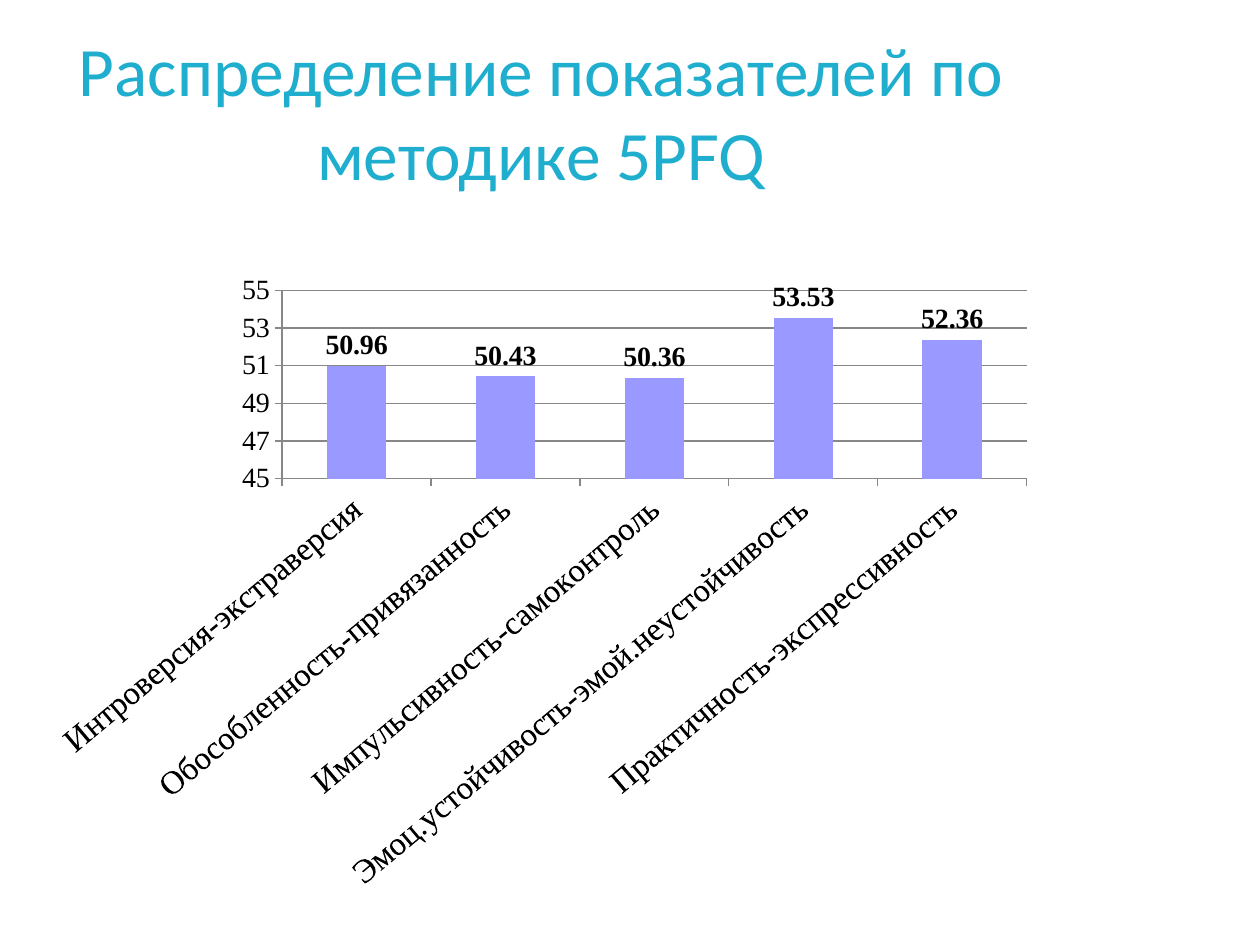
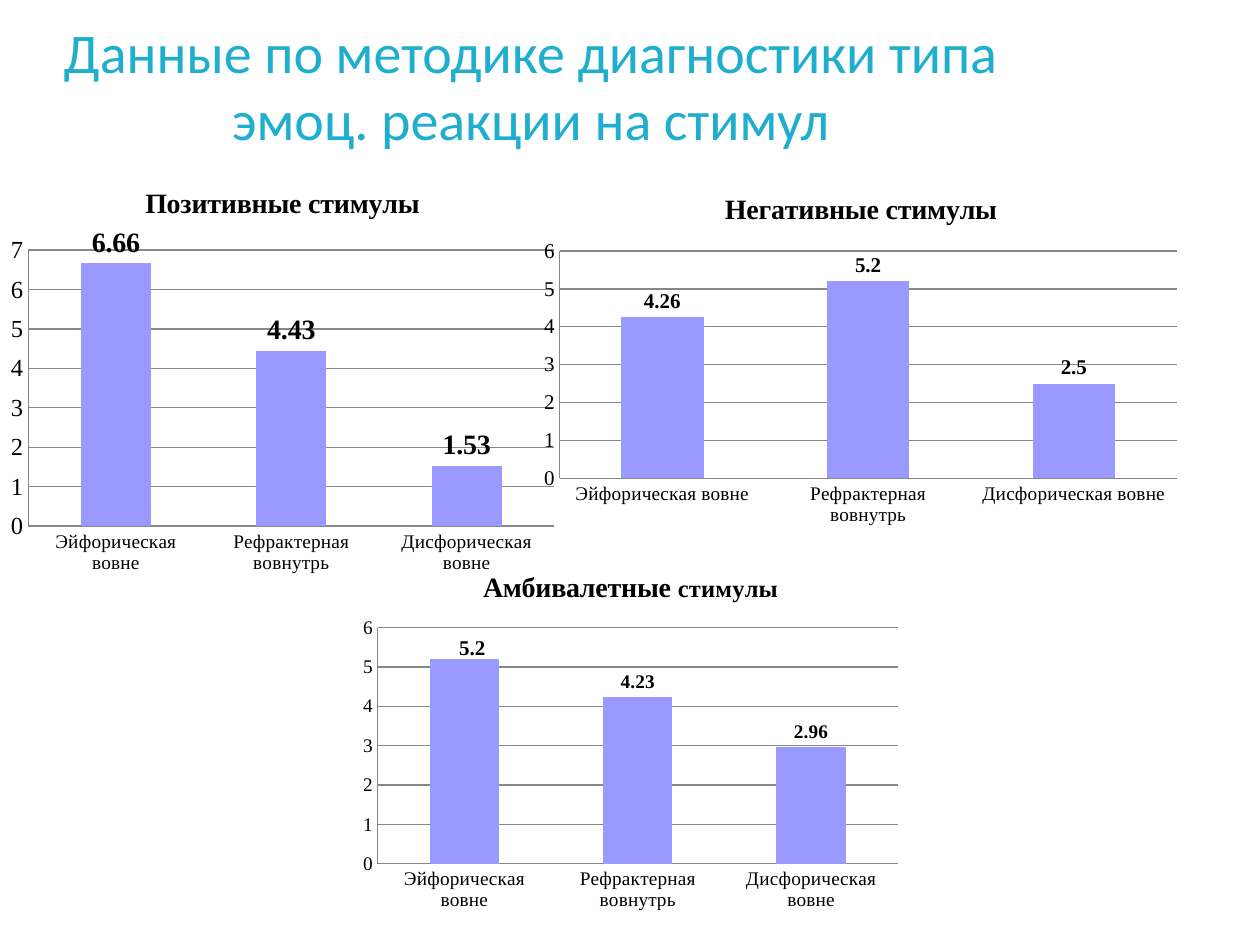
from dataclasses import dataclass

from lxml import etree
from pptx import Presentation
from pptx.chart.data import CategoryChartData
from pptx.dml.color import RGBColor
from pptx.enum.chart import XL_CHART_TYPE as ChartType
from pptx.enum.chart import XL_LABEL_POSITION as LabelPosition
from pptx.enum.chart import XL_TICK_MARK as TickMark
from pptx.enum.text import MSO_ANCHOR as Anchor
from pptx.enum.text import PP_ALIGN as Align
from pptx.oxml.ns import qn
from pptx.util import Inches, Pt

TITLE_FONT, CHART_FONT = "Calibri", "Times New Roman"
TITLE_COLOR, BAR_COLOR, TEXT_COLOR, LINE_COLOR = "1FAECD", "9999FF", "000000", "878787"
TITLE_WIDTH, TITLE_HEIGHT = 8.03, 1.34

TRAITS = ["Интроверсия-экстраверсия", "Обособленность-привязанность",
          "Импульсивность-самоконтроль", "Эмоц.устойчивость-эмой.неустойчивость",
          "Практичность-экспрессивность"]
REACTIONS = ["Эйфорическая вовне", "Рефрактерная вовнутрь", "Дисфорическая вовне"]


@dataclass
class BarChart:
    box: tuple
    plot: tuple
    categories: list
    values: list
    scale: tuple
    category_size: float
    value_size: float
    label_size: float
    title_runs: tuple = ()
    title_place: tuple = ()
    tick: TickMark = TickMark.NONE


def color(code):
    return RGBColor.from_string(code)


def style_font(font, name, size, code, bold=False):
    font.name, font.size, font.bold = name, Pt(size), bold
    font.color.rgb = color(code)


def style_line(line):
    line.color.rgb = color(LINE_COLOR)
    line.width = Pt(0.75)


def make_layout(inner=False, edge=False, **shares):
    layout = etree.Element(qn("c:layout"))
    manual = etree.SubElement(layout, qn("c:manualLayout"))
    settings = {"layoutTarget": "inner"} if inner else {}
    if inner or edge:
        settings.update(xMode="edge", yMode="edge")
    settings.update(shares)
    for key, value in settings.items():
        etree.SubElement(manual, qn(f"c:{key}")).set("val", str(value))
    return layout


def drop_layout(element):
    for layout in element.findall(qn("c:layout")):
        element.remove(layout)


def place_plot(chart, shares):
    area = chart._chartSpace.find(".//" + qn("c:plotArea"))
    drop_layout(area)
    area.insert(0, make_layout(inner=True, **dict(zip("xywh", shares))))


def add_title(slide, text, left, top, size):
    box = slide.shapes.add_textbox(Inches(left), Inches(top),
                                   Inches(TITLE_WIDTH), Inches(TITLE_HEIGHT))
    frame = box.text_frame
    frame.word_wrap = True
    frame.vertical_anchor = Anchor.MIDDLE
    paragraph = frame.paragraphs[0]
    paragraph.text = text
    paragraph.alignment = Align.CENTER
    style_font(paragraph.font, TITLE_FONT, size, TITLE_COLOR)


def add_chart_title(chart, runs, place):
    chart.has_title = bool(runs)
    if not runs:
        return
    paragraph = chart.chart_title.text_frame.paragraphs[0]
    for text, size in runs:
        run = paragraph.add_run()
        run.text = text
        style_font(run.font, CHART_FONT, size, TEXT_COLOR, True)
    title = chart._chartSpace.find(".//" + qn("c:title"))
    drop_layout(title)
    left, top = place
    title.find(qn("c:tx")).addnext(make_layout(edge=True, x=left, y=top))


def style_axis(axis, size, tick):
    style_font(axis.tick_labels.font, CHART_FONT, size, TEXT_COLOR)
    axis.major_tick_mark, axis.minor_tick_mark = tick, TickMark.NONE
    style_line(axis.format.line)


def add_bar_chart(slide, bars):
    data = CategoryChartData()
    data.categories = bars.categories
    data.add_series("Series 1", bars.values)
    chart = slide.shapes.add_chart(ChartType.COLUMN_CLUSTERED,
                                   *map(Inches, bars.box), data).chart
    style_font(chart.font, TITLE_FONT, 10, TEXT_COLOR)
    chart.has_legend = False
    add_chart_title(chart, bars.title_runs, bars.title_place)
    place_plot(chart, bars.plot)

    style_axis(chart.category_axis, bars.category_size, bars.tick)
    value_axis = chart.value_axis
    style_axis(value_axis, bars.value_size, bars.tick)
    value_axis.minimum_scale, value_axis.maximum_scale, value_axis.major_unit = bars.scale
    value_axis.has_major_gridlines = True
    style_line(value_axis.major_gridlines.format.line)

    plot = chart.plots[0]
    plot.gap_width = 150
    plot.vary_by_categories = False
    series = plot.series[0]
    series.format.fill.solid()
    series.format.fill.fore_color.rgb = color(BAR_COLOR)
    series.format.line.fill.background()
    labels = series.data_labels
    labels.show_value = True
    labels.position = LabelPosition.OUTSIDE_END
    style_font(labels.font, CHART_FONT, bars.label_size, TEXT_COLOR, True)
    return chart


def slant_categories(chart, degrees):
    body = chart.category_axis._element.find(qn("c:txPr")).find(qn("a:bodyPr"))
    body.set("rot", str(-degrees * 60000))
    body.set("vert", "horz")


def shift_label(chart, index, size, right, down):
    series = chart.plots[0].series[0]
    label = series.points[index].data_label
    style_font(label.font, CHART_FONT, size, TEXT_COLOR, True)
    label.position = LabelPosition.OUTSIDE_END
    element = series._element.find(".//" + qn("c:dLbl"))
    element.find(qn("c:idx")).addnext(make_layout(x=right, y=down))


def add_traits_slide(slide):
    add_title(slide, "Распределение показателей по методике 5PFQ", 0.28, 0.21, 39.6)
    chart = add_bar_chart(slide, BarChart(
        (0.28, 2.18, 8.03, 5.12), (0.244, 0.018, 0.736, 0.294),
        TRAITS, [50.96, 50.43, 50.36, 53.53, 52.36], (45, 55, 2), 19, 16, 16,
        tick=TickMark.OUTSIDE))
    slant_categories(chart, 40)


def add_stimuli_slide(slide):
    add_title(slide, "Данные по методике диагностики типа эмоц. реакции на стимул", 0.2, 0, 32)
    add_bar_chart(slide, BarChart(
        (0, 1.31, 4.49, 3.31), (0.05, 0.204, 0.93, 0.662),
        REACTIONS, [6.66, 4.43, 1.53], (0, 7, 1), 11, 14, 16,
        (("Позитивные стимулы", 16),), (0.248, 0.035)))
    ambivalent = add_bar_chart(slide, BarChart(
        (2.8, 4.38, 4.42, 2.91), (0.045, 0.207, 0.934, 0.644),
        REACTIONS, [5.2, 4.23, 2.96], (0, 6, 1), 11, 11, 11,
        (("Амбивалетные ", 16), ("стимулы", 14)), (0.227, 0.038)))
    shift_label(ambivalent, 0, 12, 0.014, 0.014)
    add_bar_chart(slide, BarChart(
        (4.21, 1.39, 5.24, 2.84), (0.044, 0.212, 0.935, 0.636),
        REACTIONS, [4.26, 5.2, 2.5], (0, 6, 1), 11, 12, 12,
        (("Негативные стимулы", 16),), (0.287, 0.031)))


def main():
    presentation = Presentation()
    presentation.slide_width, presentation.slide_height = Inches(10), Inches(7.5)
    blank = presentation.slide_layouts[6]
    for fill_slide in (add_traits_slide, add_stimuli_slide):
        fill_slide(presentation.slides.add_slide(blank))
    presentation.save("out.pptx")


if __name__ == "__main__":
    main()
